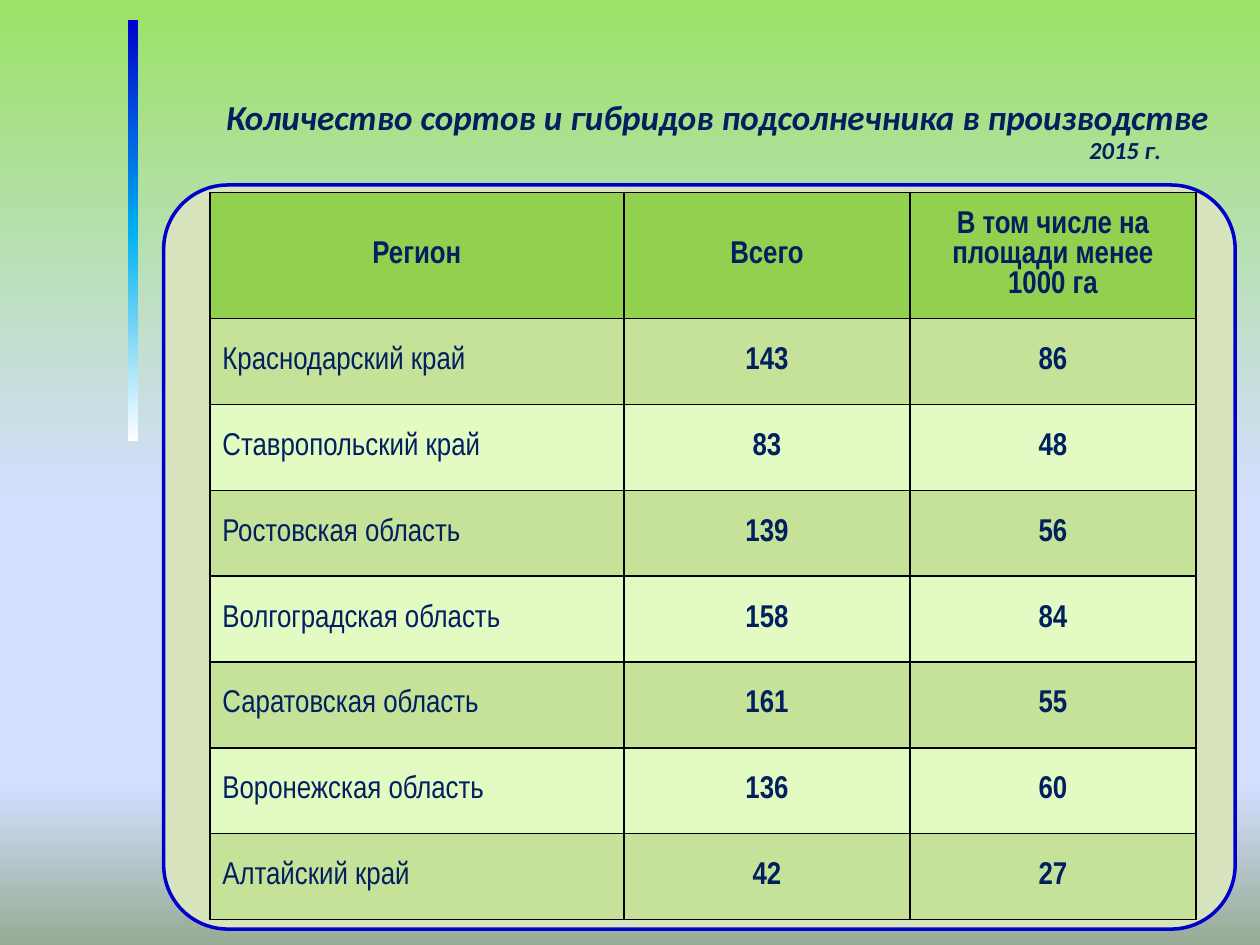
from collections import namedtuple

from lxml import etree
from pptx import Presentation
from pptx.dml.color import RGBColor
from pptx.enum.shapes import MSO_SHAPE
from pptx.enum.text import MSO_ANCHOR, MSO_AUTO_SIZE, PP_ALIGN
from pptx.oxml.ns import qn
from pptx.util import Cm, Pt

RECTANGLE, ROUNDED = MSO_SHAPE.RECTANGLE, MSO_SHAPE.ROUNDED_RECTANGLE
MIDDLE = MSO_ANCHOR.MIDDLE
GROW = MSO_AUTO_SIZE.SHAPE_TO_FIT_TEXT
LEFT, CENTER = PP_ALIGN.LEFT, PP_ALIGN.CENTER

NAVY = RGBColor(0x00, 0x20, 0x60)
BLUE = RGBColor(0x00, 0x00, 0xCC)
SKY = RGBColor(0x00, 0xB0, 0xF0)
WHITE = RGBColor(0xFF, 0xFF, 0xFF)
BLACK = RGBColor(0x00, 0x00, 0x00)
SAND = RGBColor(0xD7, 0xE4, 0xBD)
HEADER_GREEN = RGBColor(0x92, 0xD0, 0x50)
DARK_BAND = RGBColor(0xC6, 0xE1, 0x98)
LIGHT_BAND = RGBColor(0xE3, 0xFB, 0xC3)
MEADOW = RGBColor(0x9B, 0xE2, 0x66)
LILAC = RGBColor(0xD4, 0xDE, 0xFF)
MOSS = RGBColor(0x96, 0xAB, 0x94)

HEADING_FONT, TABLE_FONT = "Calibri", "Arial Narrow"

HEADERS = ("Регион", "Всего", "В том числе на площади менее 1000 га")
REGIONS = (
    ("Краснодарский край", 143, 86),
    ("Ставропольский край", 83, 48),
    ("Ростовская область", 139, 56),
    ("Волгоградская область", 158, 84),
    ("Саратовская область", 161, 55),
    ("Воронежская область", 136, 60),
    ("Алтайский край", 42, 27),
)

Box = namedtuple("Box", "left top width height")


def box_in_cm(*lengths):
    return Box(*(Cm(length) for length in lengths))


def write_text(frame, text, font, size, bold=True, italic=False,
               align=CENTER, indent=None):
    para = frame.paragraphs[0]
    para.alignment = align
    if indent is not None:
        para._p.get_or_add_pPr().set("indent", str(indent))
    span = para.add_run()
    span.text = text
    span.font.name, span.font.size = font, Pt(size)
    span.font.bold, span.font.italic = bold, italic
    span.font.color.rgb = NAVY


def fill_downwards(owner, fill, stops):
    """Give the fill of owner a top-to-bottom gradient of (percent, colour) stops."""
    fill.gradient()
    gradient = owner.element.find(".//" + qn("a:gradFill"))
    stop_list = gradient.find(qn("a:gsLst"))
    for stop in list(stop_list):
        stop_list.remove(stop)
    for percent, colour in stops:
        stop = etree.SubElement(stop_list, qn("a:gs"), pos=str(percent * 1000))
        etree.SubElement(stop, qn("a:srgbClr"), val=str(colour))
    gradient.find(qn("a:lin")).set("ang", "5400000")


def add_plain_shape(page, kind, box):
    shape = page.shapes.add_shape(kind, *box)
    shape.shadow.inherit = False
    return shape


def add_side_bar(page, box):
    bar = add_plain_shape(page, RECTANGLE, box)
    fill_downwards(bar, bar.fill, ((0, BLUE), (50, SKY), (100, WHITE)))
    bar.line.fill.background()


def add_heading(page, box):
    """Place the title at the top of the box and the year below it at the right."""
    title = page.shapes.title
    title.left, title.top, title.width, title.height = box
    year = page.shapes.add_textbox(
        box.left + box.width - Cm(4.99), box.top + Cm(0.8), Cm(4.3), Cm(0.86))
    for shape, text, size in (
        (title, "Количество сортов и гибридов подсолнечника в производстве", 20),
        (year, "2015 г.", 14),
    ):
        frame = shape.text_frame
        frame.word_wrap = True
        frame.auto_size = GROW
        frame.vertical_anchor = MIDDLE
        write_text(frame, text, HEADING_FONT, size, italic=True, indent=Cm(1.25))


def set_borders(cell):
    properties = cell._tc.get_or_add_tcPr()
    for position, side in enumerate(("a:lnL", "a:lnR", "a:lnT", "a:lnB")):
        line = etree.Element(qn(side), w=str(Pt(1)))
        solid = etree.SubElement(line, qn("a:solidFill"))
        etree.SubElement(solid, qn("a:srgbClr"), val=str(BLACK))
        properties.insert(position, line)


def add_region_table(page, box):
    rows = (HEADERS, *REGIONS)
    table = page.shapes.add_table(len(rows), len(HEADERS), *box).table
    table.horz_banding = False
    for column, share in zip(table.columns, (0.42, 0.29, 0.29)):
        column.width = int(box.width * share)
    header_height = Cm(2.54)
    row_height = (box.height - header_height) // len(REGIONS)
    for row_index, values in enumerate(rows):
        is_header = row_index == 0
        table.rows[row_index].height = header_height if is_header else row_height
        band = DARK_BAND if row_index % 2 else LIGHT_BAND
        for column_index, value in enumerate(values):
            is_name = column_index == 0 and not is_header
            cell = table.cell(row_index, column_index)
            cell.vertical_anchor = MIDDLE
            cell.fill.solid()
            cell.fill.fore_color.rgb = HEADER_GREEN if is_header else band
            set_borders(cell)
            write_text(cell.text_frame, str(value), TABLE_FONT, 18,
                       bold=not is_name, align=LEFT if is_name else CENTER)


def add_table_panel(page, box):
    panel = add_plain_shape(page, ROUNDED, box)
    panel.adjustments[0] = 0.086
    panel.fill.solid()
    panel.fill.fore_color.rgb = SAND
    panel.line.color.rgb = BLUE
    panel.line.width = Pt(2)
    add_region_table(page, Box(box.left + Cm(0.93), box.top + Cm(0.15),
                               Cm(19.88), Cm(14.66)))


def main():
    deck = Presentation()
    deck.slide_width, deck.slide_height = Cm(25.4), Cm(19.05)
    page = deck.slides.add_slide(deck.slide_layouts[5])
    fill_downwards(page, page.background.fill,
                   ((0, MEADOW), (53, LILAC), (83, LILAC), (100, MOSS)))
    add_side_bar(page, box_in_cm(2.58, 0.4, 0.2, 8.5))
    add_table_panel(page, box_in_cm(3.3, 3.73, 21.6, 15))
    add_heading(page, box_in_cm(2.78, 1.79, 22.12, 1.11))
    deck.save("out.pptx")


if __name__ == "__main__":
    main()
